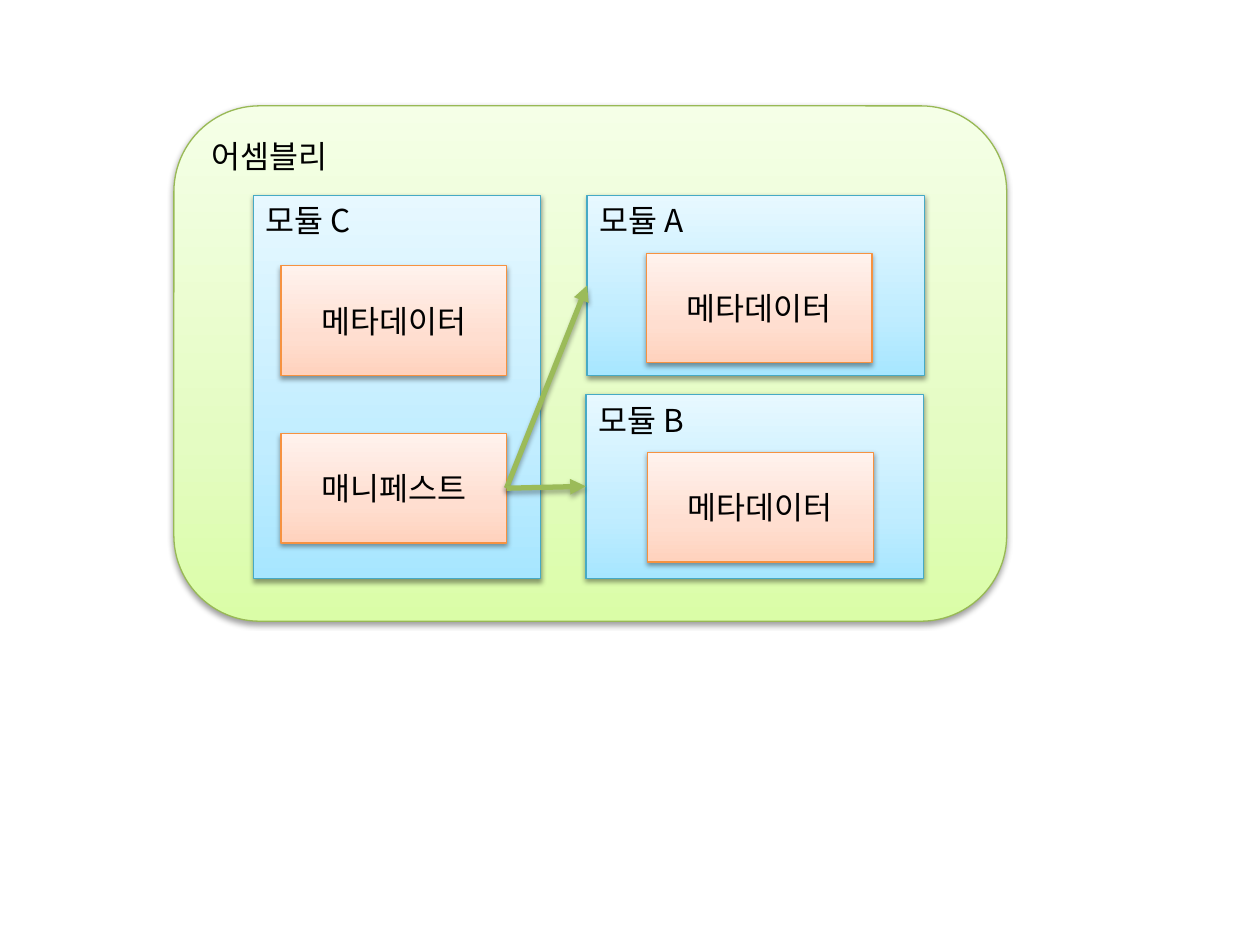
from copy import deepcopy

from lxml import etree
from pptx import Presentation
from pptx.dml.color import RGBColor
from pptx.enum.shapes import MSO_CONNECTOR, MSO_SHAPE
from pptx.enum.text import MSO_ANCHOR, PP_ALIGN
from pptx.oxml.ns import qn
from pptx.util import Inches, Pt

RECT, ROUND = MSO_SHAPE.RECTANGLE, MSO_SHAPE.ROUNDED_RECTANGLE
STRAIGHT = MSO_CONNECTOR.STRAIGHT
TOP, MIDDLE = MSO_ANCHOR.TOP, MSO_ANCHOR.MIDDLE
LEFT, CENTER = PP_ALIGN.LEFT, PP_ALIGN.CENTER

FONT = "Noto Sans CJK KR"
# Line colour, then gradient colours from bottom to top
GREEN = ("98B955", "DAFDA7", "E4FCC2", "F5FFE7")
BLUE = ("46AAC5", "A7E6FF", "C1EDFF", "E7F8FF")
ORANGE = ("F69240", "FFD2BD", "FFDED0", "FFF2ED")
STOPS = (0, 0.35, 1)
CARD_W, CARD_H = 1.79, 0.87


def color(code):
    return RGBColor.from_string(code)


def add_shadow(shape, alpha, dist):
    effects = etree.SubElement(shape._element.spPr, qn("a:effectLst"))
    outer = etree.SubElement(
        effects, qn("a:outerShdw"), blurRad=str(Pt(3.1)), dist=str(Pt(dist)),
        dir="5400000", rotWithShape="0")
    black = etree.SubElement(outer, qn("a:srgbClr"), val="000000")
    etree.SubElement(black, qn("a:alpha"), val=str(alpha * 1000))


def fill_gradient(shape, codes):
    fill = shape.fill
    fill.gradient()
    fill.gradient_angle = 90
    stops = shape._element.spPr.find(qn("a:gradFill")).find(qn("a:gsLst"))
    stops.append(deepcopy(stops[0]))
    for stop, code, place in zip(fill.gradient_stops, codes, STOPS):
        stop.color.rgb = color(code)
        stop.position = place


def add_box(group, box, text, theme, kind=RECT, anchor=TOP, align=LEFT):
    shape = group.shapes.add_shape(kind, *map(Inches, box))
    fill_gradient(shape, theme[1:])
    shape.line.color.rgb = color(theme[0])
    shape.line.width = Pt(0.75)
    add_shadow(shape, 38, 1.6)

    frame = shape.text_frame
    frame.text = text
    frame.word_wrap = True
    frame.vertical_anchor = anchor
    para = frame.paragraphs[0]
    para.alignment = align
    run = para.runs[0]
    run.font.size = Pt(18)
    run.font.name = FONT
    run.font.color.rgb = color("000000")
    etree.SubElement(run._r.get_or_add_rPr(), qn("a:ea"), typeface=FONT)
    return shape


def add_module(group, box, title, cards):
    """Draw a module and its cards, each given as (text, dx, dy)."""
    left, top = box[:2]
    module = add_box(group, box, title, BLUE)
    inner = [
        add_box(group, (left + dx, top + dy, CARD_W, CARD_H), text, ORANGE,
                anchor=MIDDLE, align=CENTER)
        for text, dx, dy in cards
    ]
    return module, inner


def add_arrow(group, start, end):
    arrow = group.shapes.add_connector(STRAIGHT, 0, 0, 0, 0)
    arrow.begin_connect(start, 3)
    arrow.end_connect(end, 1)
    arrow.line.color.rgb = color("9BBB59")
    arrow.line.width = Pt(3)
    etree.SubElement(arrow.line._get_or_add_ln(), qn("a:tailEnd"),
                     type="triangle")
    add_shadow(arrow, 35, 1.8)


def add_assembly(slide, box):
    left, top = box[:2]
    group = slide.shapes.add_group_shape()
    add_box(group, box, "어셈블리", GREEN, kind=ROUND)

    # Modules, placed from the corner of the assembly
    row = top + 0.71
    _, cards = add_module(
        group, (left + 0.63, row, 2.28, 3.04), "모듈 C",
        [("메타데이터", 0.22, 0.56), ("매니페스트", 0.22, 1.89)])
    mod_a, _ = add_module(group, (left + 3.28, row, 2.68, 1.43), "모듈 A",
                          [("메타데이터", 0.47, 0.46)])
    mod_b, _ = add_module(group, (left + 3.27, row + 1.58, 2.68, 1.46),
                          "모듈 B", [("메타데이터", 0.49, 0.46)])

    # Arrows from the manifest
    for module in (mod_a, mod_b):
        add_arrow(group, cards[1], module)


def main():
    deck = Presentation()
    deck.slide_width, deck.slide_height = Inches(10), Inches(7.5)
    slide = deck.slides.add_slide(deck.slide_layouts[6])
    add_assembly(slide, (1.38, 0.84, 6.61, 4.09))
    deck.save("out.pptx")


if __name__ == "__main__":
    main()
